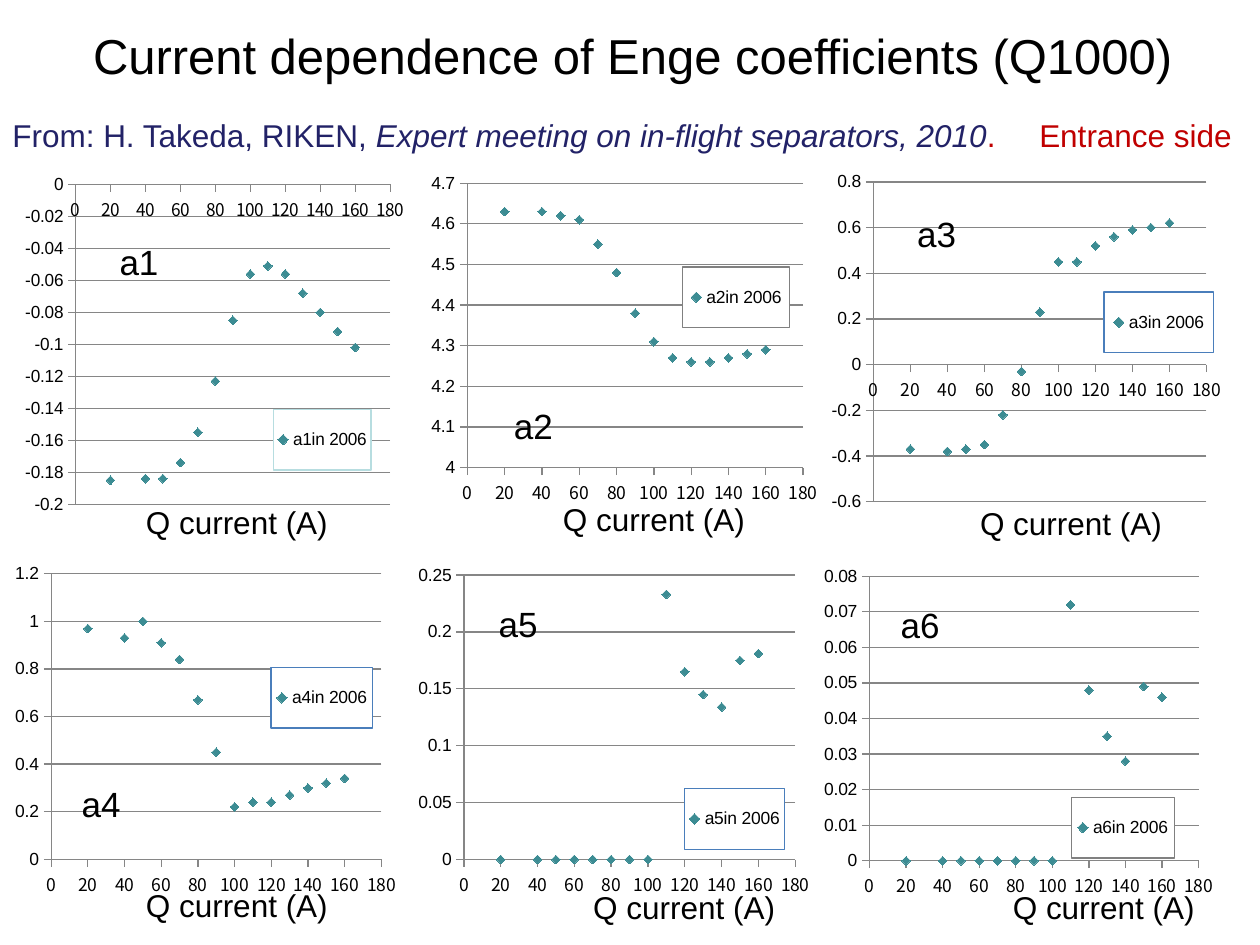
from dataclasses import dataclass

from lxml import etree
from pptx import Presentation
from pptx import util as u
from pptx.chart.data import XyChartData
from pptx.dml.color import RGBColor
from pptx.enum import chart as charts, text
from pptx.oxml import ns, parse_xml


class Theme:
    font = "Arial"
    axis_font = "Noto Sans CJK JP"
    black, navy, red = "000000", "222267", "C00000"
    marker, grid = "3C8C93", "868686"
    pale, blue, gray = "B7DDE0", "4A7EBB", "808080"
    title, body, name, chart = 28, 18, 20, 10


@dataclass
class Panel:
    """One coefficient; places are in inches, the plot in fractions of the box."""
    name: str
    box: tuple
    plot: tuple
    scale: tuple  # minimum, maximum, step
    legend: tuple
    border: str
    label_at: tuple
    axis_title_at: tuple
    values: tuple


CURRENTS = (20, *range(40, 161, 10))
ZEROS = (0,) * 8
AUTOMATIC = (None, None, None)  # keeps the zero tick free of rounding error
PANELS = [
    Panel("a1", (0.2, 1.32, 3.01, 2.83), (0.114, 0.051, 0.848, 0.897),
          (-0.2, 0, 0.02), (2.15, 3.25, 0.79, 0.48), Theme.pale,
          (0.85, 1.86), (1.06, 3.94),
          (-0.185, -0.184, -0.184, -0.174, -0.155, -0.123, -0.085,
           -0.056, -0.051, -0.056, -0.068, -0.08, -0.092, -0.102)),
    Panel("a2", (3.38, 1.31, 3.11, 2.83), (0.106, 0.051, 0.857, 0.798),
          (4, 4.7, 0.1), (5.42, 2.12, 0.85, 0.48), Theme.gray,
          (3.98, 3.16), (4.37, 3.92),
          (4.63, 4.63, 4.62, 4.61, 4.55, 4.48, 4.38,
           4.31, 4.27, 4.26, 4.26, 4.27, 4.28, 4.29)),
    Panel("a3", (6.6, 1.3, 3.09, 2.83), (0.106, 0.051, 0.857, 0.897),
          AUTOMATIC, (8.76, 2.32, 0.87, 0.48), Theme.blue,
          (7.18, 1.64), (7.68, 3.95),
          (-0.37, -0.38, -0.37, -0.35, -0.22, -0.03, 0.23,
           0.45, 0.45, 0.52, 0.56, 0.59, 0.6, 0.62)),
    Panel("a4", (0.12, 4.41, 3.02, 2.84), (0.092, 0.051, 0.871, 0.798),
          (0, 1.2, 0.2), (2.15, 5.3, 0.81, 0.48), Theme.blue,
          (0.55, 6.16), (1.06, 6.98),
          (0.97, 0.93, 1, 0.91, 0.84, 0.67, 0.45,
           0.22, 0.24, 0.24, 0.27, 0.3, 0.32, 0.34)),
    Panel("a5", (3.32, 4.42, 3.11, 2.83), (0.114, 0.051, 0.848, 0.798),
          (0, 0.25, 0.05), (5.43, 6.26, 0.8, 0.48), Theme.blue,
          (3.86, 4.73), (4.61, 7),
          (*ZEROS, 0.233, 0.165, 0.145, 0.134, 0.175, 0.181)),
    Panel("a6", (6.54, 4.43, 3.09, 2.83), (0.114, 0.051, 0.848, 0.798),
          (0, 0.08, 0.01), (8.5, 6.33, 0.82, 0.48), Theme.gray,
          (7.05, 4.74), (7.94, 7),
          (*ZEROS, 0.072, 0.048, 0.035, 0.028, 0.049, 0.046)),
]


def set_font(font, size, color=Theme.black, name=Theme.font):
    font.size, font.name = u.Pt(size), name
    font.color.rgb = RGBColor.from_string(color)


def add_text(page, box, spans, size, wrap=False):
    """Add one paragraph from (words, colour, italic) spans."""
    frame = page.shapes.add_textbox(*map(u.Inches, box)).text_frame
    frame.word_wrap = wrap
    para = frame.paragraphs[0]
    for words, color, italic in spans:
        span = para.add_run()
        span.text = words
        span.font.italic = italic
        set_font(span.font, size, color)
    return frame


def add_title(page, box):
    words = "Current dependence of Enge coefficients (Q1000)"
    frame = add_text(page, box, [(words, Theme.black, False)], Theme.title, True)
    frame.vertical_anchor = text.MSO_ANCHOR.MIDDLE
    frame.paragraphs[0].alignment = text.PP_ALIGN.CENTER


def add_source_line(page, box):
    frame = add_text(page, box, [
        ("From: H. Takeda, RIKEN, ", Theme.navy, False),
        ("Expert meeting on in-flight separators, 2010", Theme.navy, True),
        (".\tEntrance side", Theme.red, False),
    ], Theme.body, True)
    properties = frame.paragraphs[0]._p.get_or_add_pPr()
    stops = etree.SubElement(properties, ns.qn("a:tabLst"))
    etree.SubElement(stops, ns.qn("a:tab"), pos=str(u.Inches(8.15)), algn="l")


def manual_layout(place, target=""):
    """Make a layout element from left, top, width and height fractions."""
    inner = f'<c:layoutTarget val="{target}"/>' if target else ""
    modes = '<c:xMode val="edge"/><c:yMode val="edge"/>'
    sizes = "".join(f'<c:{key} val="{value:.3f}"/>' for key, value in zip("xywh", place))
    return parse_xml(f'<c:layout {ns.nsdecls("c")}><c:manualLayout>'
                     f'{inner}{modes}{sizes}</c:manualLayout></c:layout>')


def clear_layout(element):
    for layout in element.findall(ns.qn("c:layout")):
        element.remove(layout)


def style_axis(axis, scale, font_name):
    axis.minimum_scale, axis.maximum_scale, axis.major_unit = scale
    axis.major_tick_mark = charts.XL_TICK_MARK.OUTSIDE
    axis.minor_tick_mark = charts.XL_TICK_MARK.NONE
    axis.tick_label_position = charts.XL_TICK_LABEL_POSITION.NEXT_TO_AXIS
    axis.tick_labels.number_format = "General"
    axis.tick_labels.number_format_is_linked = False
    axis.format.line.color.rgb = RGBColor.from_string(Theme.grid)
    axis.format.line.width = u.Pt(0.75)
    set_font(axis.tick_labels.font, Theme.chart, name=font_name)


def style_legend(chart, place, border):
    chart.has_legend = True
    legend = chart.legend
    legend.position = charts.XL_LEGEND_POSITION.RIGHT
    legend.include_in_layout = False
    set_font(legend.font, Theme.chart)
    element = legend._element
    clear_layout(element)
    element.find(ns.qn("c:legendPos")).addnext(manual_layout(place))
    element.find(ns.qn("c:txPr")).addprevious(parse_xml(
        f'<c:spPr {ns.nsdecls("c", "a")}>'
        '<a:solidFill><a:srgbClr val="FFFFFF"/></a:solidFill>'
        f'<a:ln w="9525"><a:solidFill><a:srgbClr val="{border}"/></a:solidFill></a:ln>'
        '</c:spPr>'))


def add_scatter(page, panel):
    data = XyChartData()
    points = data.add_series(f"{panel.name}in 2006")
    for current, value in zip(CURRENTS, panel.values):
        points.add_data_point(current, value)
    chart = page.shapes.add_chart(charts.XL_CHART_TYPE.XY_SCATTER,
                                  *map(u.Inches, panel.box), data).chart
    chart.has_title = False
    set_font(chart.font, Theme.chart)
    plot = chart.plots[0]
    plot.vary_by_categories = False

    series = plot.series[0]
    series.format.line.fill.background()
    series.marker.style = charts.XL_MARKER_STYLE.DIAMOND
    series.marker.size = 5
    for part in (series.marker.format.fill, series.marker.format.line.fill):
        part.solid()
        part.fore_color.rgb = RGBColor.from_string(Theme.marker)

    style_axis(chart.category_axis, (0, 180, 20), Theme.axis_font)
    style_axis(chart.value_axis, panel.scale, Theme.font)
    chart.category_axis.has_major_gridlines = False
    chart.value_axis.has_major_gridlines = True
    grid_line = chart.value_axis.major_gridlines.format.line
    grid_line.color.rgb = RGBColor.from_string(Theme.grid)
    grid_line.width = u.Pt(0.75)

    area = chart._chartSpace.chart.plotArea
    clear_layout(area)
    area.insert(0, manual_layout(panel.plot, "inner"))
    left, top, width, height = panel.box
    x, y, w, h = panel.legend
    style_legend(chart, ((x - left) / width, (y - top) / height, w / width, h / height),
                 panel.border)


def build():
    deck = Presentation()
    deck.slide_width, deck.slide_height = u.Inches(10), u.Inches(7.5)
    page = deck.slides.add_slide(deck.slide_layouts[6])
    add_title(page, (0.02, 0, 10, 0.87))
    for panel in PANELS:
        add_scatter(page, panel)
    add_source_line(page, (0, 0.87, 10, 0.4))
    for panel in PANELS:
        add_text(page, (*panel.axis_title_at, 1.66, 0.4),
                 [("Q current (A)", Theme.black, False)], Theme.body)
        add_text(page, (*panel.label_at, 0.51, 0.44),
                 [(panel.name, Theme.black, False)], Theme.name)
    deck.save("out.pptx")


if __name__ == "__main__":
    build()
